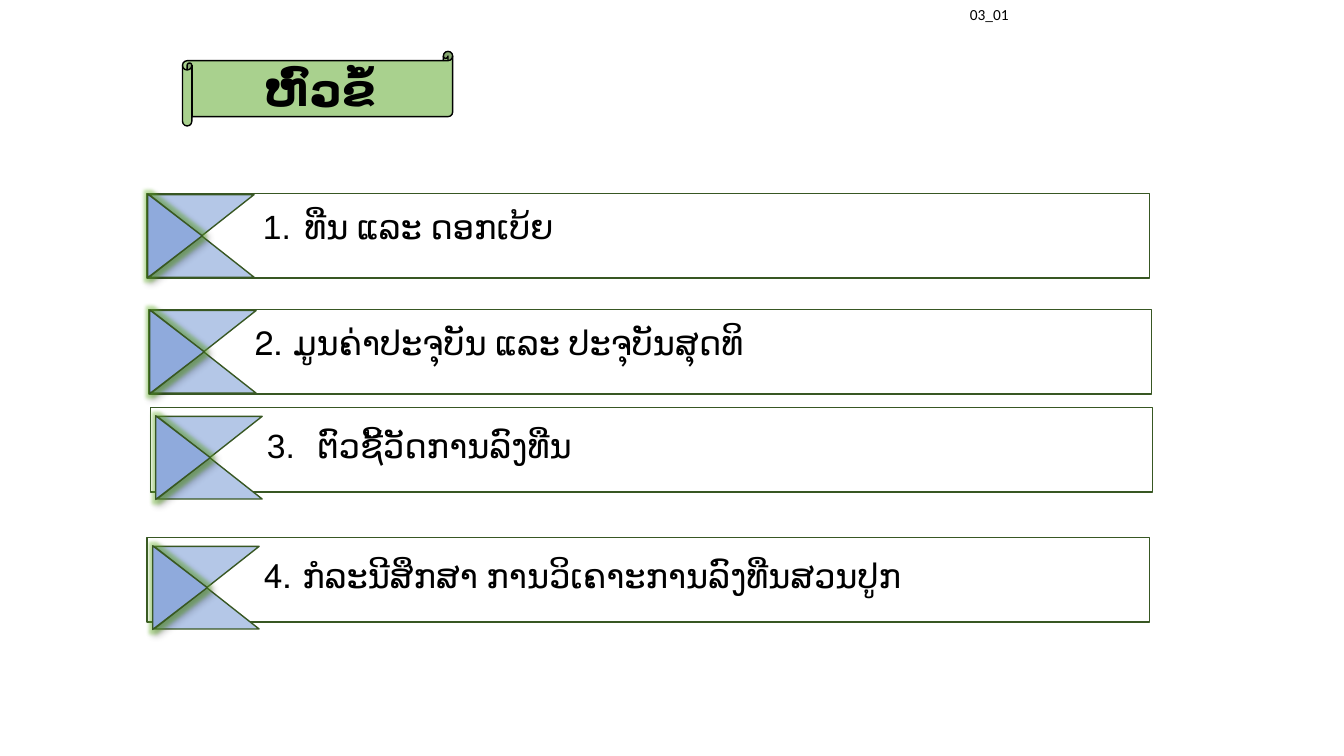
from dataclasses import dataclass

from lxml import etree
from pptx import Presentation
from pptx.dml.color import RGBColor
from pptx.enum.shapes import MSO_SHAPE
from pptx.enum.text import MSO_ANCHOR, MSO_AUTO_SIZE, PP_ALIGN
from pptx.oxml import parse_xml
from pptx.oxml.ns import nsdecls, qn
from pptx.shapes.autoshape import Shape
from pptx.shapes.shapetree import GroupShapes, SlideShapes
from pptx.text.text import _Paragraph
from pptx.util import Emu, Pt

RECTANGLE = MSO_SHAPE.RECTANGLE
TRIANGLE = MSO_SHAPE.ISOSCELES_TRIANGLE
SCROLL = MSO_SHAPE.HORIZONTAL_SCROLL
MIDDLE = MSO_ANCHOR.MIDDLE
CENTER = PP_ALIGN.CENTER
FIT_TEXT = MSO_AUTO_SIZE.SHAPE_TO_FIT_TEXT

PX = 9144  # 100 px to the inch


@dataclass(frozen=True)
class Theme:
    text: str = "000000"
    bar: str = "FFFFFF"
    border: str = "385723"
    wing: str = "B4C7E7"
    dart: str = "8FAADC"
    glow: str = "70C030"
    banner: str = "A9D18E"
    font: str = "Arial"
    code_font: str = "Calibri"
    title_size: int = 32
    topic_size: int = 24
    code_size: int = 11
    line_width: int = 1


@dataclass(frozen=True)
class Box:
    left: int
    top: int
    width: int
    height: int

    def emu(self) -> tuple[Emu, ...]:
        return tuple(Emu(n * PX) for n in (self.left, self.top, self.width, self.height))


@dataclass(frozen=True)
class Topic:
    text: str
    bar: tuple[int, int]
    mark: tuple[int, int]
    label: tuple[int, int]
    number: int = 0  # automatic number, if any
    first_indent: int = 0


THEME = Theme()
BAR_SIZE = (994, 84)
WING_SIZE = (104, 41)
DART_SIZE = (83, 54)
DART_OFFSET = (-16, 14)
LABEL_SIZE = (890, 50)
HANGING = 38
TAB_STOP = 65

TOPICS = (
    Topic("1.\tທືນ ແລະ ດອກເບ້ຍ", (146, 192), (148, 193), (242, 199), first_indent=9),
    Topic("ມູນຄ່າປະຈຸບັນ ແລະ ປະຈຸບັນສຸດທິ", (148, 307), (150, 308), (243, 314), number=2),
    Topic("3.\tຕົວຊີ້ວັດການລົງທືນ", (149, 404), (156, 413), (255, 417)),
    Topic("ກໍລະນີສຶກສາ ການວິເຄາະການລົງທືນສວນປູກ", (146, 533), (153, 542), (252, 546), number=4),
)


def add_figure(shapes: SlideShapes | GroupShapes, kind: MSO_SHAPE, box: Box, fill: str,
               border: str = THEME.border, rotation: int = 0) -> Shape:
    shape = shapes.add_shape(kind, *box.emu())
    shape.shadow.inherit = False
    shape.fill.solid()
    shape.fill.fore_color.rgb = RGBColor.from_string(fill)
    shape.line.color.rgb = RGBColor.from_string(border)
    shape.line.width = Pt(THEME.line_width)
    shape.rotation = rotation
    return shape


def set_font(paragraph: _Paragraph, name: str, size: int, bold: bool = False) -> None:
    font = paragraph.font
    font.name, font.size, font.bold = name, Pt(size), bold
    font.color.rgb = RGBColor.from_string(THEME.text)


def add_label(shapes: SlideShapes | GroupShapes, box: Box, text: str) -> _Paragraph:
    frame = shapes.add_textbox(*box.emu()).text_frame
    frame.word_wrap = True
    frame.auto_size = FIT_TEXT
    paragraph = frame.paragraphs[0]
    paragraph.add_run().text = text
    return paragraph


def add_glow_and_shadow(shape: Shape) -> None:
    effects = shape._element.spPr.find(qn("a:effectLst"))
    effects.append(parse_xml(
        f'<a:glow {nsdecls("a")} rad="{Pt(5)}"><a:srgbClr val="{THEME.glow}">'
        '<a:alpha val="40000"/></a:srgbClr></a:glow>'))
    effects.append(parse_xml(
        f'<a:outerShdw {nsdecls("a")} blurRad="{Pt(4)}" dist="{Pt(3)}" dir="2700000">'
        '<a:srgbClr val="000000"><a:alpha val="40000"/></a:srgbClr></a:outerShdw>'))


def set_numbering(paragraph: _Paragraph, topic: Topic) -> None:
    properties = paragraph._p.get_or_add_pPr()
    if topic.number:
        properties.set("marL", str(HANGING * PX))
        properties.set("indent", str(-HANGING * PX))
        etree.SubElement(properties, qn("a:buFont"), typeface=THEME.font)
        etree.SubElement(properties, qn("a:buAutoNum"), type="arabicPeriod",
                         startAt=str(topic.number))
    else:
        properties.set("marL", "0")
        properties.set("indent", str(topic.first_indent * PX))
        tabs = etree.SubElement(properties, qn("a:tabLst"))
        etree.SubElement(tabs, qn("a:tab"), pos=str(TAB_STOP * PX), algn="l")


def add_topic(slide_shapes: SlideShapes, topic: Topic) -> None:
    shapes = slide_shapes.add_group_shape().shapes
    add_figure(shapes, RECTANGLE, Box(*topic.bar, *BAR_SIZE), THEME.bar)

    # Arrow mark: two wings and a glowing dart
    left, top = topic.mark
    for row, rotation in enumerate((180, 0)):
        wing = Box(left, top + row * WING_SIZE[1], *WING_SIZE)
        add_figure(shapes, TRIANGLE, wing, THEME.wing, rotation=rotation)
    dart = Box(left + DART_OFFSET[0], top + DART_OFFSET[1], *DART_SIZE)
    add_glow_and_shadow(add_figure(shapes, TRIANGLE, dart, THEME.dart, rotation=90))

    paragraph = add_label(shapes, Box(*topic.label, *LABEL_SIZE), topic.text)
    set_numbering(paragraph, topic)
    set_font(paragraph, THEME.font, THEME.topic_size)


def add_title(shapes: SlideShapes) -> None:
    banner = add_figure(shapes, SCROLL, Box(181, 51, 268, 74), THEME.banner, THEME.text)
    frame = banner.text_frame
    frame.vertical_anchor = MIDDLE
    paragraph = frame.paragraphs[0]
    paragraph.alignment = CENTER
    paragraph.add_run().text = "ຫົວຂໍ້"
    set_font(paragraph, THEME.font, THEME.title_size, bold=True)


def main() -> None:
    presentation = Presentation()
    presentation.slide_width = Emu(1333 * PX)
    presentation.slide_height = Emu(750 * PX)
    slide = presentation.slides.add_slide(presentation.slide_layouts[6])

    # Slide code
    code = add_label(slide.shapes, Box(952, 0, 64, 29), "03_01")
    set_font(code, THEME.code_font, THEME.code_size)

    # Title and topics
    add_title(slide.shapes)
    for topic in TOPICS:
        add_topic(slide.shapes, topic)

    presentation.save("out.pptx")


if __name__ == "__main__":
    main()
